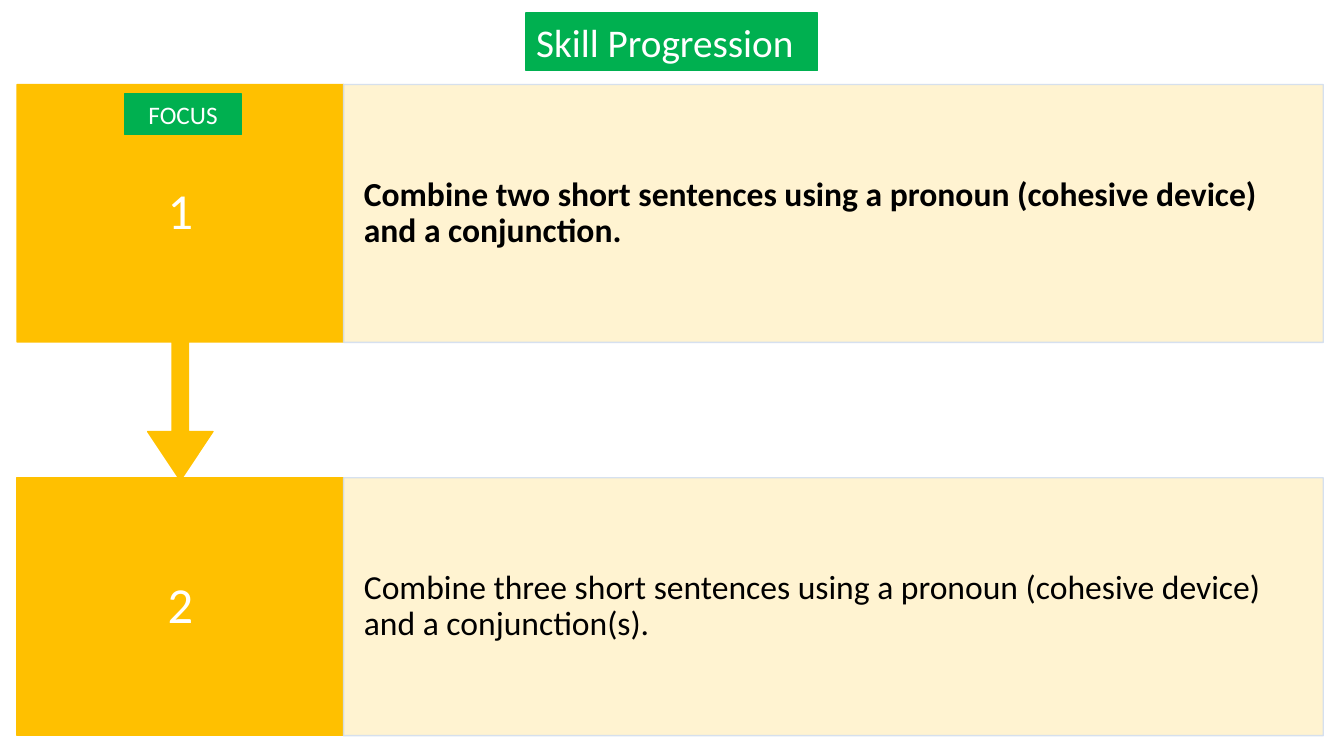
from dataclasses import dataclass

from lxml import etree
from pptx import Presentation
from pptx.dml.color import RGBColor
from pptx.enum.shapes import MSO_SHAPE
from pptx.enum.text import MSO_ANCHOR, PP_ALIGN
from pptx.oxml.ns import qn
from pptx.util import Cm, Pt

RECT = MSO_SHAPE.RECTANGLE
CALLOUT = MSO_SHAPE.DOWN_ARROW_CALLOUT
LEFT, CENTER = PP_ALIGN.LEFT, PP_ALIGN.CENTER
MIDDLE = MSO_ANCHOR.MIDDLE


@dataclass(frozen=True)
class Theme:
    font: str = "Calibri"
    gold: RGBColor = RGBColor(0xFF, 0xC0, 0x00)
    cream: RGBColor = RGBColor(0xFF, 0xF2, 0xCC)
    edge: RGBColor = RGBColor(0xD2, 0xDE, 0xEF)
    green: RGBColor = RGBColor(0x00, 0xB0, 0x50)
    white: RGBColor = RGBColor(0xFF, 0xFF, 0xFF)
    black: RGBColor = RGBColor(0x00, 0x00, 0x00)
    title: int = 28
    number: int = 36
    body: int = 24
    tag: int = 18
    alpha: int = 90


THEME = Theme()
EDGE, TOP, PITCH = 0.43, 2.13, 9.91
STEP_W, BODY_W, ROW_H = 8.23, 24.69, 6.5
CALL_H = 9.98
CALL_ADJ = (0.05, 0.1, 0.15, 0.65)
STEPS = (
    ("1", "Combine two short sentences using a pronoun (cohesive device) "
          "and a conjunction.", True),
    ("2", "Combine three short sentences using a pronoun (cohesive device) "
          "and a conjunction(s).", False),
)


def paint(shape, fill, line):
    shape.fill.solid()
    shape.fill.fore_color.rgb = fill
    shape.line.color.rgb = line
    shape.line.width = Pt(1)


def fade(shape):
    for color in shape.element.spPr.iter(qn("a:srgbClr")):
        alpha = etree.SubElement(color, qn("a:alpha"))
        alpha.set("val", str(THEME.alpha * 1000))


def write(shape, text, size, color, align, pad, bold=False, space=1.0):
    frame = shape.text_frame
    frame.word_wrap = True
    frame.vertical_anchor = MIDDLE
    frame.margin_left = frame.margin_right = Cm(pad[0])
    frame.margin_top = frame.margin_bottom = Cm(pad[1])
    frame.text = text
    para = frame.paragraphs[0]
    para.alignment = align
    para.line_spacing = space
    para.font.name = THEME.font
    para.font.size = Pt(size)
    para.font.bold = bold
    para.font.color.rgb = color


def add_box(slide, kind, left, top, width, height, fill, line):
    box = slide.shapes.add_shape(
        kind, Cm(left), Cm(top), Cm(width), Cm(height))
    box.shadow.inherit = False
    paint(box, fill, line)
    return box


def add_title(slide, text):
    title = slide.shapes.title
    title.left, title.top = Cm(13.26), Cm(0.33)
    title.width, title.height = Cm(7.34), Cm(1.45)
    paint(title, THEME.green, THEME.green)
    write(title, text, THEME.title, THEME.white, LEFT, (0.25, 0.13))


def add_step(slide, index, last):
    number, text, bold = STEPS[index]
    top = TOP + index * PITCH
    kind, height = (RECT, ROW_H) if last else (CALLOUT, CALL_H)
    step = add_box(slide, kind, EDGE, top, STEP_W, height,
                   THEME.gold, THEME.gold)
    if not last:
        for pos, value in enumerate(CALL_ADJ):
            step.adjustments[pos] = value
    write(step, number, THEME.number, THEME.white, CENTER,
          (0.58, 0.71), space=0.9)
    body = add_box(slide, RECT, EDGE + STEP_W, top, BODY_W, ROW_H,
                   THEME.cream, THEME.edge)
    fade(body)
    write(body, text, THEME.body, THEME.black, LEFT,
          (0.51, 0.84), bold, 0.9)


def add_tag(slide, text):
    tag = add_box(slide, RECT, 3.14, 2.37, 2.95, 1.02,
                  THEME.green, THEME.green)
    write(tag, text, THEME.tag, THEME.white, CENTER, (0.25, 0.13))


def main():
    deck = Presentation()
    deck.slide_width, deck.slide_height = Cm(33.87), Cm(19.05)
    slide = deck.slides.add_slide(deck.slide_layouts[5])
    add_title(slide, "Skill Progression")
    end = len(STEPS) - 1
    for index in range(end, -1, -1):
        add_step(slide, index, index == end)
    add_tag(slide, "FOCUS")
    deck.save("out.pptx")


if __name__ == "__main__":
    main()
